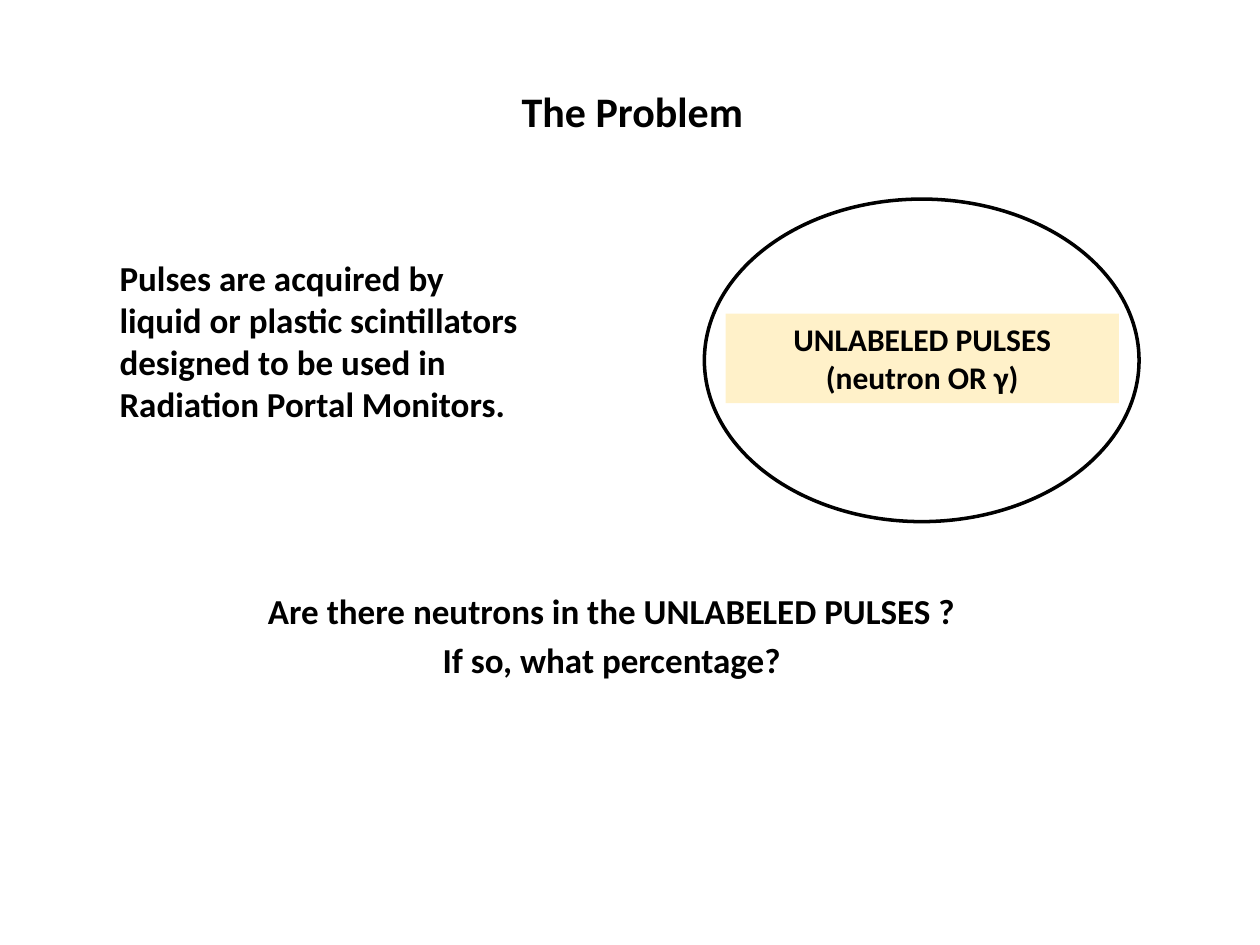
from pptx import Presentation, util as u
from pptx.dml.color import RGBColor
from pptx.enum import shapes, text
from pptx.oxml.ns import qn
from lxml import etree

WIDTH, HEIGHT = u.Inches(10), u.Inches(7.5)
BLACK, AMBER = "000000", "FFC000"
LEFT, CENTER = text.PP_ALIGN.LEFT, text.PP_ALIGN.CENTER

# Content: lines, (left, top, width, height) in percent of the slide, size, alignment
TITLE = (["The Problem"], (38.2, 8.4, 23.3, 8), 24, LEFT)
PULSES = (["UNLABELED PULSES (neutron OR γ)"], (57.6, 33.2, 31.2, 9.47), 18, CENTER)
QUESTIONS = (["Are there neutrons in the UNLABELED PULSES ?", "If so, what percentage?"],
             (12.9, 61.73, 71.3, 13.87), 20, CENTER)
SOURCE = (["Pulses are acquired by liquid or plastic scintillators "
           "designed to be used in Radiation Portal Monitors."],
          (8.5, 26.53, 34.5, 19.33), 20, LEFT)
POOL = (55.9, 21.07, 34.5, 34.13)
TITLE_INSET = u.Inches(0.32)


def color(value):
    return RGBColor.from_string(value)


def place(area):
    return [int(share * side / 100) for share, side in zip(area, (WIDTH, HEIGHT) * 2)]


def write(box, lines, size, align):
    frame = box.text_frame
    frame.word_wrap = True
    frame.vertical_anchor = text.MSO_ANCHOR.TOP
    frame.text = "\n".join(lines)
    style = {"name": "Calibri", "size": u.Pt(size), "bold": True}
    for paragraph in frame.paragraphs:
        paragraph.alignment = align
        for key, value in style.items():
            setattr(paragraph.runs[0].font, key, value)
        paragraph.runs[0].font.color.rgb = color(BLACK)
    for paragraph in frame.paragraphs[1:]:
        paragraph.space_before = u.Pt(size * 0.2)


def add_text(parent, lines, area, size, align):
    box = parent.add_textbox(*place(area))
    write(box, lines, size, align)
    return box


deck = Presentation()
deck.slide_width, deck.slide_height = WIDTH, HEIGHT
slide = deck.slides.add_slide(deck.slide_layouts[6])

# Title
title = add_text(slide.shapes, *TITLE)
title.text_frame.margin_left = TITLE_INSET

# Pool of unlabeled pulses: tinted label inside an outlined ellipse
pool = slide.shapes.add_group_shape().shapes
label = add_text(pool, *PULSES)
label.fill.solid()
label.fill.fore_color.rgb = color(AMBER)
tint = label.fill._xPr.find(qn("a:solidFill"))[0]
etree.SubElement(tint, qn("a:alpha")).set("val", "21000")

ellipse = pool.add_shape(shapes.MSO_SHAPE.OVAL, *place(POOL))
ellipse.shadow.inherit = False
ellipse.fill.background()
ellipse.line.color.rgb = color(BLACK)
ellipse.line.width = u.Pt(2)

# Questions and explanation
for block in (QUESTIONS, SOURCE):
    add_text(slide.shapes, *block)

deck.save("out.pptx")
